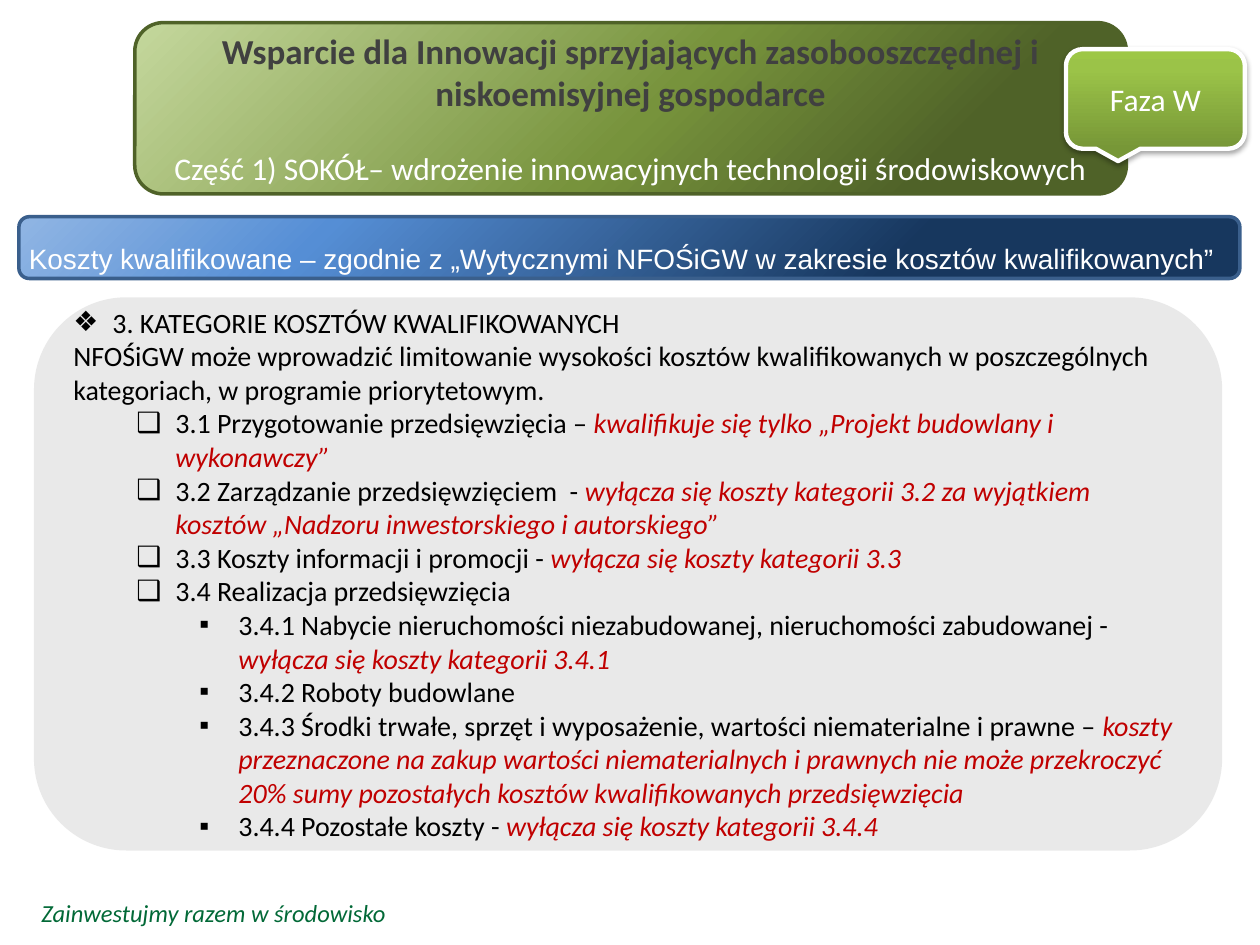
from copy import deepcopy
from lxml.etree import SubElement
from pptx import Presentation
from pptx.dml.color import RGBColor
from pptx.enum.shapes import MSO_SHAPE
from pptx.enum.text import MSO_ANCHOR, PP_ALIGN
from pptx.oxml.ns import qn
from pptx.util import Inches, Pt


def hue(code):
    return RGBColor.from_string(code)


def write(para, text, code, **look):
    run = para.add_run()
    run.text = text
    run.font.color.rgb = hue(code)
    for key, value in {"name": "Calibri", "size": Pt(16), **look}.items():
        setattr(run.font, key, value)


deck = Presentation()
deck.slide_width, deck.slide_height = Inches(10), Inches(7.5)
slide = deck.slides.add_slide(deck.slide_layouts[6])
shapes = slide.shapes

foot = shapes.add_textbox(Inches(0.23), Inches(7.08), Inches(4.22), Inches(0.34)).text_frame
foot.word_wrap = True
write(foot.paragraphs[0], "Zainwestujmy razem w środowisko", "026937", size=Pt(14), italic=True)

round_box = MSO_SHAPE.ROUNDED_RECTANGLE
panel = shapes.add_shape(round_box, Inches(0.27), Inches(2.36), Inches(9.43), Inches(4.39))
panel.shadow.inherit = False
panel.line.fill.background()
panel.fill.solid()
panel.fill.fore_color.rgb = hue("D9D9D9")
tone = panel.fill._xPr.find(qn("a:solidFill"))[0]
SubElement(tone, qn("a:alpha"), val="56000")

items = [
    (0, "❖", "3. KATEGORIE KOSZTÓW KWALIFIKOWANYCH", ""),
    (0, "", "NFOŚiGW może wprowadzić limitowanie wysokości kosztów kwalifikowanych "
     "w poszczególnych kategoriach, w programie priorytetowym.", ""),
    (1, "❑", "3.1 Przygotowanie przedsięwzięcia – ",
     "kwalifikuje się tylko „Projekt budowlany i wykonawczy”"),
    (1, "❑", "3.2 Zarządzanie przedsięwzięciem  - ",
     "wyłącza się koszty kategorii 3.2 za wyjątkiem kosztów „Nadzoru inwestorskiego i autorskiego”"),
    (1, "❑", "3.3 Koszty informacji i promocji - ", "wyłącza się koszty kategorii 3.3"),
    (1, "❑", "3.4 Realizacja przedsięwzięcia", ""),
    (2, "▪", "3.4.1 Nabycie nieruchomości niezabudowanej, nieruchomości zabudowanej - ",
     "wyłącza się koszty kategorii 3.4.1"),
    (2, "▪", "3.4.2 Roboty budowlane", ""),
    (2, "▪", "3.4.3 Środki trwałe, sprzęt i wyposażenie, wartości niematerialne i prawne – ",
     "koszty przeznaczone na zakup wartości niematerialnych i prawnych nie może przekroczyć "
     "20% sumy pozostałych kosztów kwalifikowanych przedsięwzięcia"),
    (2, "▪", "3.4.4 Pozostałe koszty - ", "wyłącza się koszty kategorii 3.4.4"),
]
body = panel.text_frame
body.word_wrap = True
body.vertical_anchor = MSO_ANCHOR.MIDDLE
for num, (level, mark, text, note) in enumerate(items):
    para = body.add_paragraph() if num else body.paragraphs[0]
    para.level = level
    para.alignment = PP_ALIGN.LEFT
    props = para._p.get_or_add_pPr()
    if mark:
        props.set("marL", str(Inches(0.31 + level * 0.5)))
        props.set("indent", str(Inches(-0.31)))
        SubElement(props, qn("a:buFont"), typeface="Arial")
        SubElement(props, qn("a:buChar"), char=mark)
    write(para, text, "000000")
    if note:
        write(para, note, "C00000", italic=True)

cards = [
    (round_box, (0.15, 1.72, 9.69, 0.49), 135, "3A5F8C", 2,
     [(0.28, "17375E"), (0.75, "558ED5"), (0.99, "8EB4E3")], []),
    (round_box, (1.07, 0.18, 7.87, 1.36), 135, "4F6228", 2,
     [(0.19, "4F6228"), (0.48, "77933C"), (0.99, "C3D69B")],
     [("Wsparcie dla Innowacji sprzyjających zasobooszczędnej i niskoemisyjnej gospodarce",
       "404040", {"size": Pt(20), "bold": True}),
      ("Część 1) SOKÓŁ– wdrożenie innowacyjnych technologii środowiskowych",
       "FFFFFF", {"size": Pt(18)})]),
    (MSO_SHAPE.ROUNDED_RECTANGULAR_CALLOUT, (8.46, 0.39, 1.42, 0.79), 90, "FFFFFF", 2.5,
     [(0, "779737"), (0.8, "9BC348"), (1, "9DC746")],
     [("Faza W", "FFFFFF", {"size": Pt(18)})]),
]
for kind, box, angle, edge, width, stops, lines in cards:
    card = shapes.add_shape(kind, *map(Inches, box))
    card.shadow.inherit = False
    card.line.color.rgb = hue(edge)
    card.line.width = Pt(width)
    card.fill.gradient()
    card.fill.gradient_angle = angle
    ramp = card._element.spPr.find(qn("a:gradFill")).find(qn("a:gsLst"))
    ramp.append(deepcopy(ramp[0]))
    for stop, (place, code) in zip(card.fill.gradient_stops, stops):
        stop.position = place
        stop.color.rgb = hue(code)
    frame = card.text_frame
    frame.word_wrap = True
    frame.vertical_anchor = MSO_ANCHOR.MIDDLE
    for num, (text, code, look) in enumerate(lines):
        para = frame.add_paragraph() if num else frame.paragraphs[0]
        para.alignment = PP_ALIGN.CENTER
        para.space_before = Pt(20 * num)
        write(para, text, code, **look)

glow = SubElement(card._element.spPr.find(qn("a:effectLst")), qn("a:outerShdw"),
                  blurRad=str(Pt(3.1)), dist=str(Pt(1.8)), dir="5400000", rotWithShape="0")
shade = SubElement(glow, qn("a:srgbClr"), val=str(hue("000000")))
SubElement(shade, qn("a:alpha"), val="35000")

label = shapes.add_textbox(Inches(0.13), Inches(1.87), Inches(9.72), Inches(0.37)).text_frame
label.word_wrap = False
write(label.paragraphs[0],
      "Koszty kwalifikowane – zgodnie z „Wytycznymi NFOŚiGW w zakresie kosztów kwalifikowanych”",
      "FFFFFF", name="Arial")

deck.save("out.pptx")
